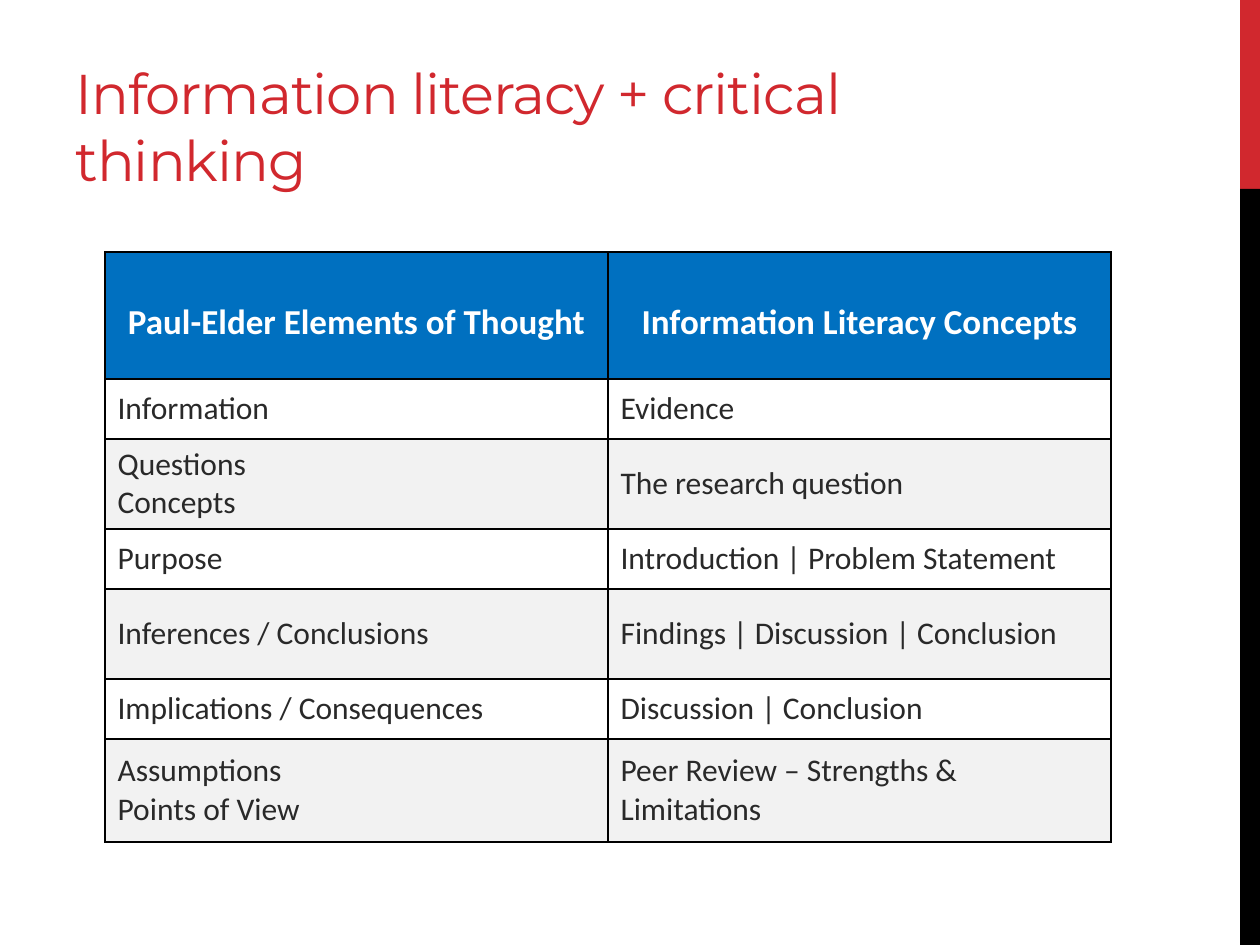
from dataclasses import dataclass

from lxml import etree
from pptx import Presentation
from pptx.dml.color import RGBColor
from pptx.enum.shapes import MSO_SHAPE
from pptx.enum.text import MSO_ANCHOR, PP_ALIGN
from pptx.oxml.ns import qn
from pptx.util import Pt

RECTANGLE = MSO_SHAPE.RECTANGLE
TOP, MIDDLE, BOTTOM = MSO_ANCHOR.TOP, MSO_ANCHOR.MIDDLE, MSO_ANCHOR.BOTTOM
LEFT, CENTER = PP_ALIGN.LEFT, PP_ALIGN.CENTER

RED, BLACK, WHITE = "D1282E", "000000", "FFFFFF"
BLUE, GRAY, INK = "0070C0", "F2F2F2", "292929"
PX_PER_INCH = 126
BORDER_EMU = 12700


@dataclass
class Bar:
    top: int
    height: int
    color: str


@dataclass
class ConceptRow:
    height: int
    element: str
    concept: str


BARS = [Bar(0, 189, RED), Bar(189, 756, BLACK)]
HEADER = ConceptRow(127, "Paul-Elder Elements of Thought", "Information Literacy Concepts")
CONCEPTS = [
    ConceptRow(60, "Information", "Evidence"),
    ConceptRow(90, "Questions\nConcepts", "The research question"),
    ConceptRow(60, "Purpose", "Introduction | Problem Statement"),
    ConceptRow(90, "Inferences / Conclusions", "Findings | Discussion | Conclusion"),
    ConceptRow(60, "Implications / Consequences", "Discussion | Conclusion"),
    ConceptRow(103, "Assumptions\nPoints of View", "Peer Review – Strengths & Limitations"),
]


def px(length: int) -> int:
    return round(length * 914400 / PX_PER_INCH)


def rgb(color: str) -> RGBColor:
    return RGBColor.from_string(color)


def write(frame, text: str, *, size: int, color: str, font: str = "Calibri",
          bold: bool = False, align=LEFT, tracking: int = 0) -> None:
    """Put each line of text in its own paragraph."""
    for index, line in enumerate(text.split("\n")):
        paragraph = frame.paragraphs[0] if index == 0 else frame.add_paragraph()
        paragraph.alignment = align
        run = paragraph.add_run()
        run.text = line
        run.font.name = font
        run.font.size = Pt(size)
        run.font.bold = bold
        run.font.color.rgb = rgb(color)
        if tracking:
            run.font._element.set("spc", str(tracking))


def draw_bar(slide, bar: Bar) -> None:
    side_bar = slide.shapes.add_shape(RECTANGLE, px(1240), px(bar.top), px(20), px(bar.height))
    side_bar.shadow.inherit = False
    side_bar.fill.solid()
    side_bar.fill.fore_color.rgb = rgb(bar.color)
    side_bar.line.fill.background()


def draw_title(slide) -> None:
    title = slide.shapes.add_textbox(px(63), px(32), px(955), px(167)).text_frame
    title.word_wrap = True
    title.vertical_anchor = BOTTOM
    write(title, "Information literacy + critical thinking", size=32, color=RED,
          font="Montserrat", tracking=-60)


def style_cell(cell, fill: str) -> None:
    properties = cell._tc.get_or_add_tcPr()
    for side in ("a:lnL", "a:lnR", "a:lnT", "a:lnB"):
        border = etree.SubElement(properties, qn(side), w=str(BORDER_EMU))
        solid = etree.SubElement(border, qn("a:solidFill"))
        etree.SubElement(solid, qn("a:srgbClr"), val=BLACK)
    cell.fill.solid()
    cell.fill.fore_color.rgb = rgb(fill)


def draw_table(slide) -> None:
    rows = [HEADER, *CONCEPTS]
    table = slide.shapes.add_table(len(rows), 2, px(105), px(252), px(1006),
                                   px(sum(row.height for row in rows))).table
    table.first_row = True
    table.horz_banding = False
    for column in table.columns:
        column.width = px(503)
    for index, row in enumerate(rows):
        table.rows[index].height = px(row.height)
        for column, text in enumerate((row.element, row.concept)):
            cell = table.cell(index, column)
            if index == 0:
                style_cell(cell, BLUE)
                cell.vertical_anchor = TOP
                cell.margin_top = px(49)
                write(cell.text_frame, text, size=20, color=WHITE, bold=True, align=CENTER)
            else:
                style_cell(cell, WHITE if index % 2 else GRAY)
                cell.vertical_anchor = MIDDLE
                write(cell.text_frame, text, size=18, color=INK)


def main() -> None:
    presentation = Presentation()
    presentation.slide_width, presentation.slide_height = px(1260), px(945)
    slide = presentation.slides.add_slide(presentation.slide_layouts[6])

    # Side bars
    for bar in BARS:
        draw_bar(slide, bar)

    # Title and comparison table
    draw_title(slide)
    draw_table(slide)

    presentation.save("out.pptx")


if __name__ == "__main__":
    main()
